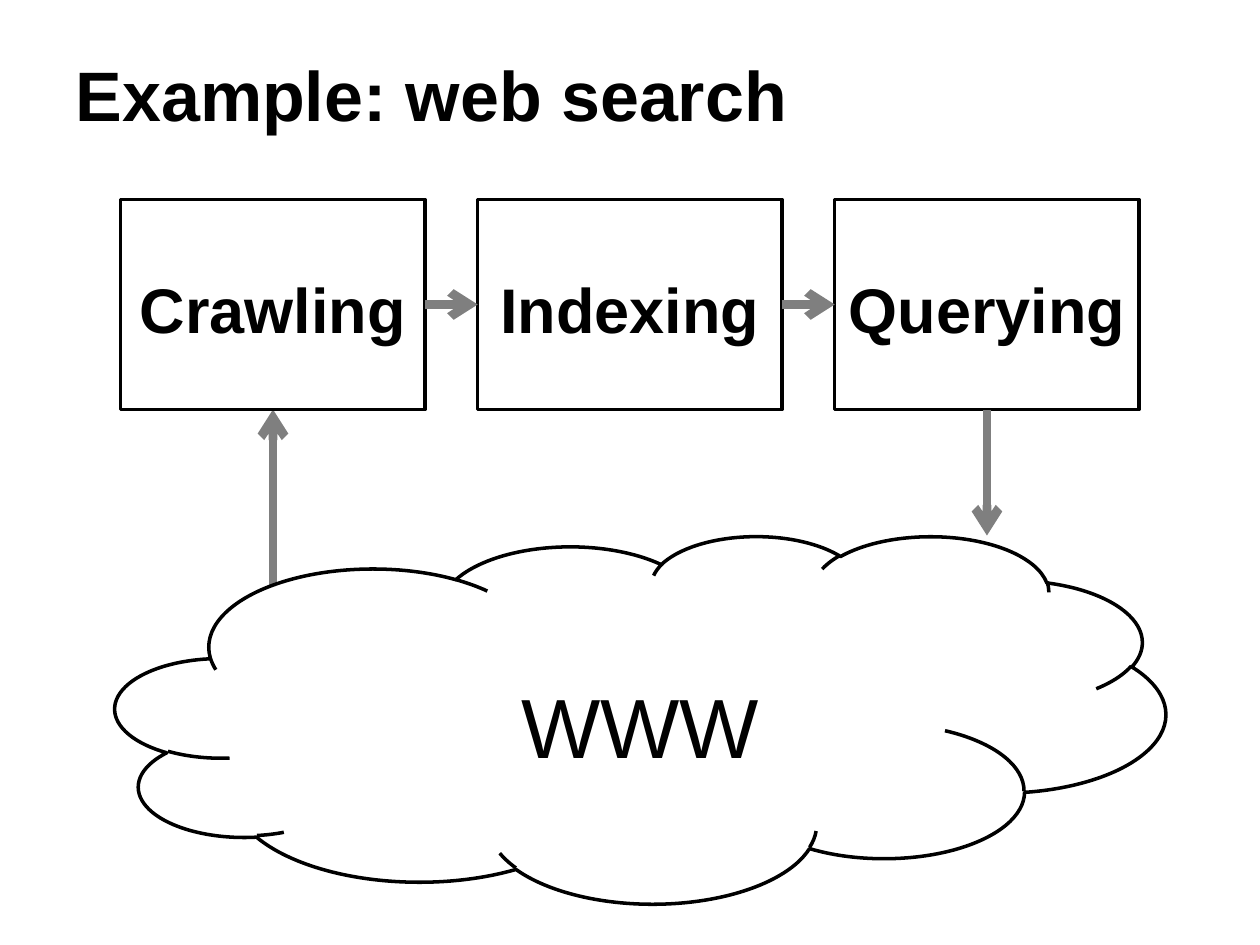
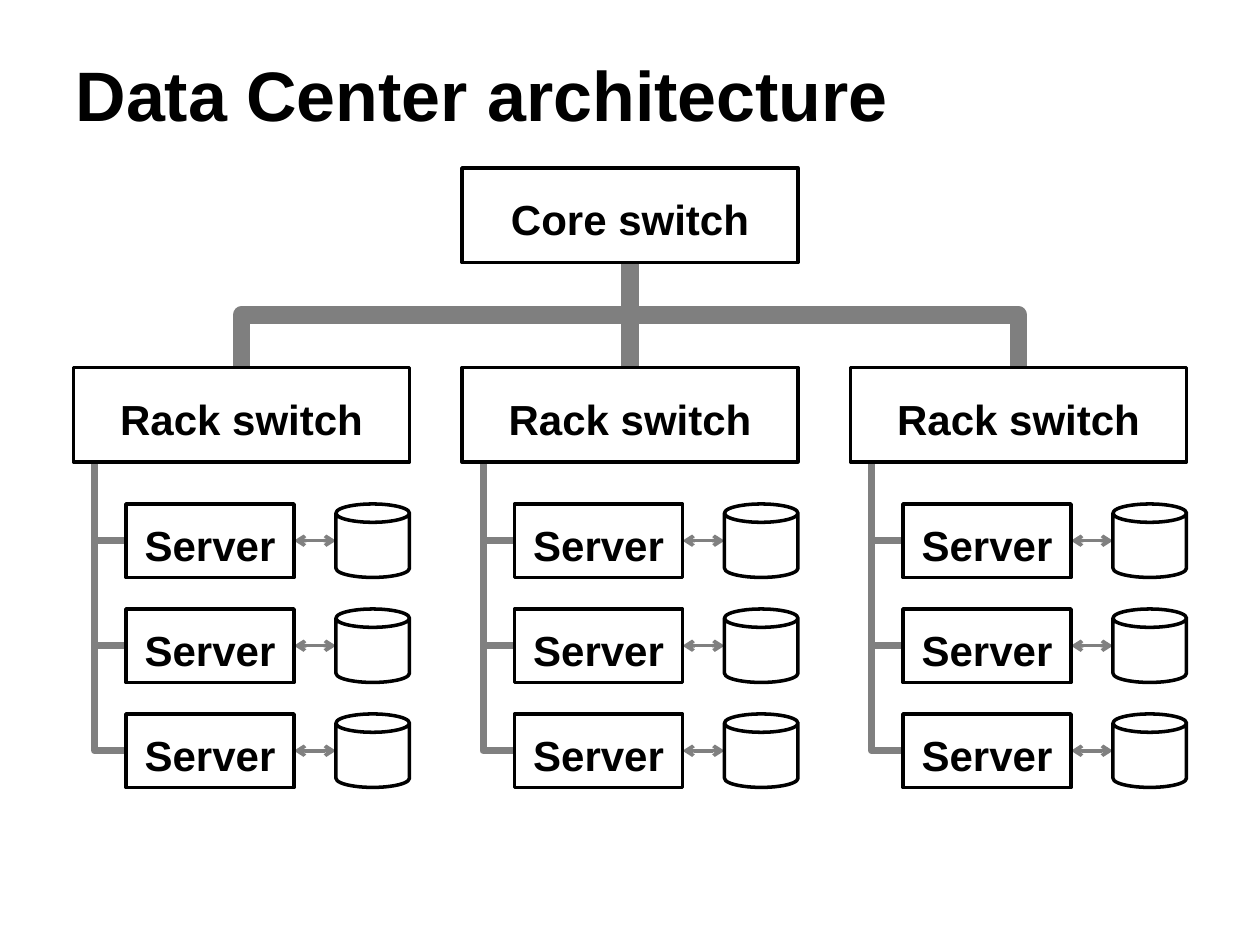
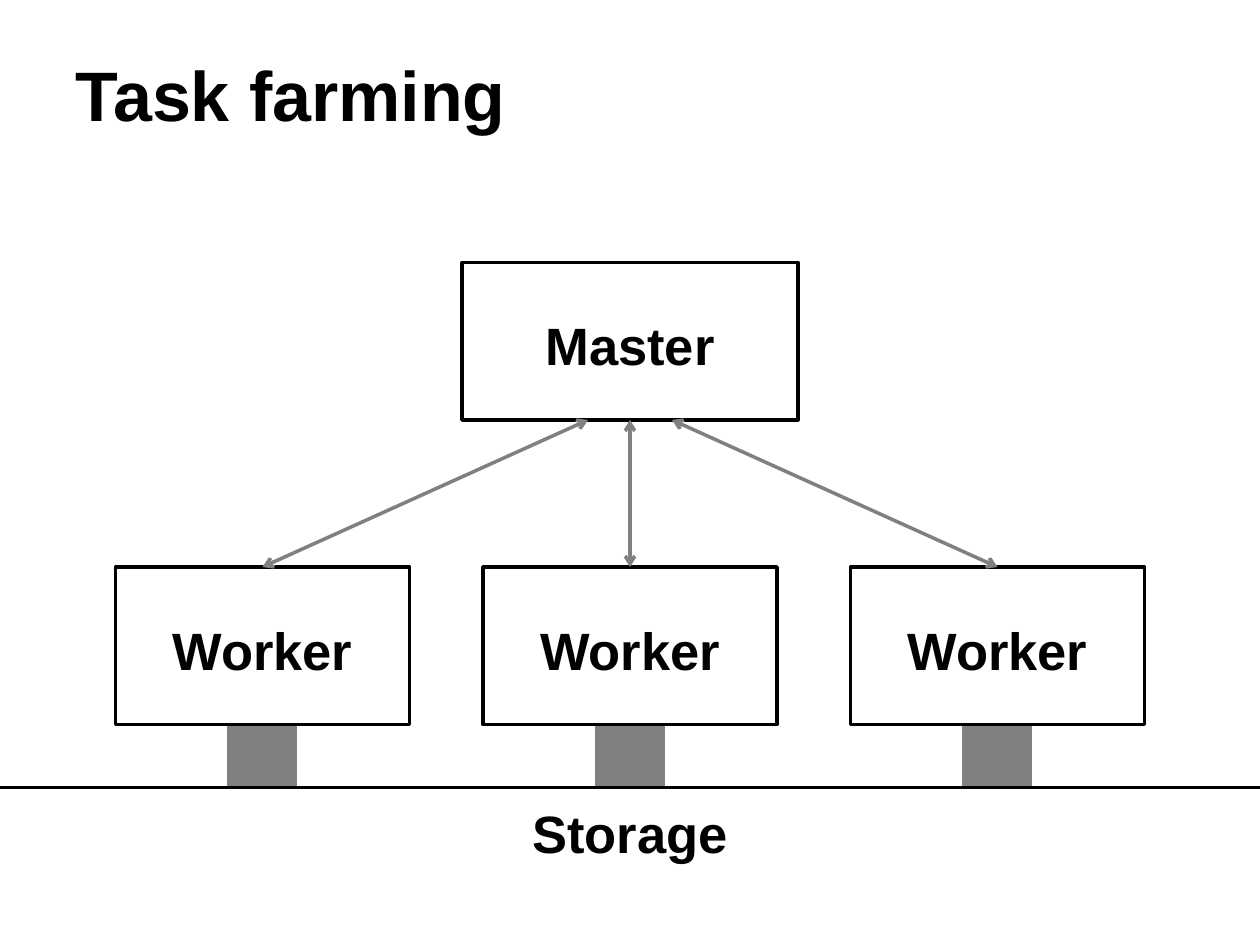
from lxml.etree import SubElement
from pptx import Presentation
from pptx.dml.color import RGBColor
from pptx.enum.shapes import MSO_CONNECTOR, MSO_SHAPE
from pptx.enum.text import MSO_ANCHOR, MSO_AUTO_SIZE, PP_ALIGN
from pptx.oxml.ns import qn
from pptx.util import Pt

BLACK, WHITE, FLOW, LINK = "000000", "FFFFFF", "7F7F7F", "808080"
SLIDE_W, SLIDE_H = 720, 540
TITLE_ONLY = 5
TOP, LEFT, BOTTOM, RIGHT = 0, 1, 2, 3
FRAME = {"margin_left": Pt(7.2), "margin_right": Pt(7.2),
         "margin_top": Pt(7.6), "margin_bottom": Pt(3.6), "word_wrap": True}


def color(hex_code):
    """Turn a hex string into a colour."""
    return RGBColor.from_string(hex_code)


def assign(target, values):
    """Set each attribute named in a dict of format values."""
    for name, value in values.items():
        setattr(target, name, value)


def write(shape, text, size, bold=True, align=PP_ALIGN.CENTER,
          anchor=MSO_ANCHOR.MIDDLE, fit=MSO_AUTO_SIZE.NONE):
    """Put one formatted line of text into a shape."""
    frame = shape.text_frame
    assign(frame, {**FRAME, "vertical_anchor": anchor, "auto_size": fit})
    paragraph = frame.paragraphs[0]
    paragraph.alignment = align
    run = paragraph.add_run()
    run.text = text
    assign(run.font, {"name": "Arial", "size": Pt(size), "bold": bold})
    run.font.color.rgb = color(BLACK)


def add_titled_slide(deck, heading):
    """Add a slide with the shared title style."""
    slide = deck.slides.add_slide(deck.slide_layouts[TITLE_ONLY])
    title = slide.shapes.title
    assign(title, {"left": Pt(36), "top": Pt(21.6),
                   "width": Pt(648), "height": Pt(90)})
    write(title, heading, 40, align=PP_ALIGN.LEFT, anchor=MSO_ANCHOR.TOP)
    return slide


def add_outlined(slide, preset, left, top, width, height):
    """Add a white shape with a black outline."""
    shape = slide.shapes.add_shape(preset, Pt(left), Pt(top), Pt(width), Pt(height))
    shape.shadow.inherit = False
    shape.fill.solid()
    shape.fill.fore_color.rgb = color(WHITE)
    shape.line.color.rgb = color(BLACK)
    shape.line.width = Pt(2)
    return shape


def add_box(slide, text, size, left, top, width, height):
    """Add a labelled rectangle."""
    box = add_outlined(slide, MSO_SHAPE.RECTANGLE, left, top, width, height)
    write(box, text, size)
    return box


def add_caption(slide, text, size, bold, left, top, width, height):
    """Add a centred text box that fits its text."""
    caption = slide.shapes.add_textbox(Pt(left), Pt(top), Pt(width), Pt(height))
    write(caption, text, size, bold, anchor=MSO_ANCHOR.TOP,
          fit=MSO_AUTO_SIZE.SHAPE_TO_FIT_TEXT)


def add_line(slide, start, end, hex_code, weight, arrows=(), kind=MSO_CONNECTOR.STRAIGHT):
    """Add a connector with the listed arrow ends, headEnd before tailEnd."""
    line = slide.shapes.add_connector(kind, *map(Pt, start + end))
    line.line.color.rgb = color(hex_code)
    line.line.width = Pt(weight)
    properties = line.element.spPr
    for arrow in arrows:
        SubElement(properties.find(qn("a:ln")), qn(f"a:{arrow}"), type="arrow")
    SubElement(properties, qn("a:effectLst"))
    return line


def add_elbow(slide, preset, center, width, height, hex_code, weight, turn, flip=False):
    """Add a bent connector turned about its center."""
    x, y = center
    elbow = add_line(slide, (x - width / 2, y - height / 2),
                     (x + width / 2, y + height / 2),
                     hex_code, weight, kind=MSO_CONNECTOR.ELBOW)
    properties = elbow.element.spPr
    properties.find(qn("a:prstGeom")).set("prst", preset)
    placement = properties.find(qn("a:xfrm"))
    placement.set("rot", str(turn * 60000))
    if flip:
        placement.set("flipH", "1")


def build_web_search(deck):
    """Show the search stages above the web cloud."""
    slide = add_titled_slide(deck, "Example: web search")
    upload = add_line(slide, (156, 378), (156, 234), FLOW, 5, ["tailEnd"])
    add_outlined(slide, MSO_SHAPE.CLOUD, 66, 306, 600, 210)
    add_caption(slide, "WWW", 48, False, 66, 378, 600, 66)
    stages = [add_box(slide, name, 36, 69 + 204 * i, 114, 174, 120)
              for i, name in enumerate(["Crawling", "Indexing", "Querying"])]
    upload.end_connect(stages[0], BOTTOM)
    for source, target in zip(stages, stages[1:]):
        step = add_line(slide, (0, 0), (0, 0), FLOW, 5, ["tailEnd"])
        step.begin_connect(source, RIGHT)
        step.end_connect(target, LEFT)
    answer = add_line(slide, (564, 234), (564, 306), FLOW, 5, ["tailEnd"])
    answer.begin_connect(stages[-1], BOTTOM)


def add_rack(slide, left):
    """Add a rack switch with its servers and disks."""
    stem, rack_bottom, server_left, disk_left = left + 12, 264, left + 30, left + 150
    for row in range(3):
        top = 288 + 60 * row
        middle = top + 21
        add_elbow(slide, "bentConnector2",
                  ((stem + server_left) / 2, (rack_bottom + middle) / 2),
                  server_left - stem, middle - rack_bottom, LINK, 4, 180)
        transfer = add_line(slide, (server_left + 96, middle), (disk_left, middle),
                            LINK, 2, ["headEnd", "tailEnd"])
        server = add_box(slide, "Server", 24, server_left, top, 96, 42)
        add_outlined(slide, MSO_SHAPE.CAN, disk_left, top, 42, 42)
        transfer.begin_connect(server, RIGHT)
    add_box(slide, "Rack switch", 24, left, 210, 192, 54)


def build_data_center(deck):
    """Show the core switch above three racks."""
    slide = add_titled_slide(deck, "Data Center architecture")
    for offset in (-222, 222, 0):
        rightward = offset > 0
        add_elbow(slide, "bentConnector3", (360 + offset / 2, 180), 60, abs(offset),
                  FLOW, 10, 270 if rightward else 90, rightward)
    for column in range(3):
        add_rack(slide, 42 + 222 * column)
    add_box(slide, "Core switch", 24, 264, 96, 192, 54)


def build_task_farming(deck):
    """Show a master with workers on shared storage."""
    slide = add_titled_slide(deck, "Task farming")
    master = add_box(slide, "Master", 30, 264, 150, 192, 90)
    for side in (-1, 0, 1):
        center = 360 + 210 * side
        pillar = add_line(slide, (center, 414), (center, 450), LINK, 40)
        worker = add_box(slide, "Worker", 30, center - 84, 324, 168, 90)
        pillar.begin_connect(worker, BOTTOM)
        task = add_line(slide, (center, 324), (360 + 24 * side, 240),
                        LINK, 2, ["headEnd", "tailEnd"])
        task.begin_connect(worker, TOP)
        if side == 0:
            task.end_connect(master, BOTTOM)
    add_line(slide, (0, 450), (SLIDE_W, 450), BLACK, 2)
    add_caption(slide, "Storage", 30, True, 0, 450, SLIDE_W, 44)


def main():
    """Build and save the deck."""
    deck = Presentation()
    assign(deck, {"slide_width": Pt(SLIDE_W), "slide_height": Pt(SLIDE_H)})
    build_web_search(deck)
    build_data_center(deck)
    build_task_farming(deck)
    deck.save("out.pptx")


if __name__ == "__main__":
    main()
